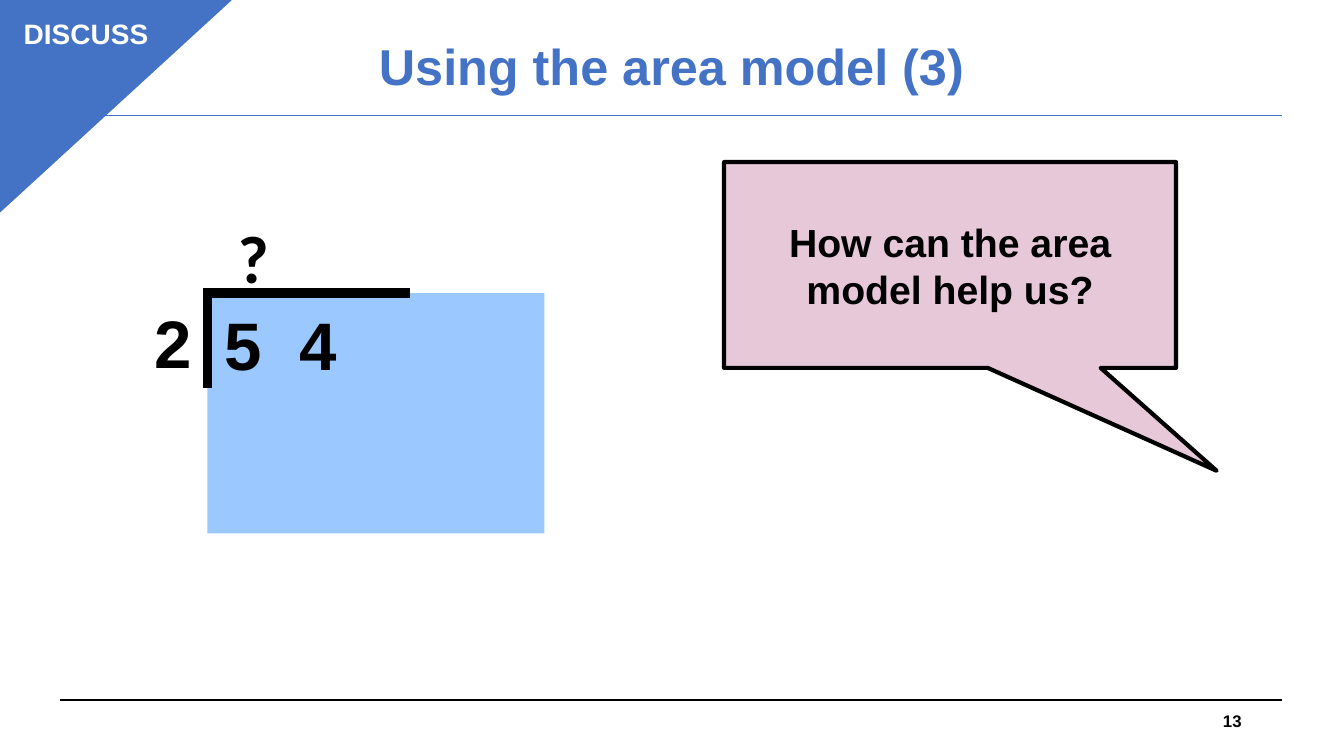
from pptx import Presentation
from pptx.dml.color import RGBColor
from pptx.enum.shapes import MSO_CONNECTOR, MSO_SHAPE
from pptx.enum.text import MSO_ANCHOR, PP_ALIGN
from pptx.oxml.xmlchemy import OxmlElement
from pptx.util import Inches, Pt

BLACK = RGBColor(0x00, 0x00, 0x00)
WHITE = RGBColor(0xFF, 0xFF, 0xFF)
BLUE = RGBColor(0x44, 0x72, 0xC4)
SKY = RGBColor(0x9B, 0xC8, 0xFF)
PINK = RGBColor(0xE6, 0xC8, 0xD9)

deck = Presentation()
deck.slide_width, deck.slide_height = Inches(13.33), Inches(7.5)
slide = deck.slides.add_slide(deck.slide_layouts[6])
shapes = slide.shapes

# Grid of 160 columns by 90 rows; a box is left, top, width, height
COL, ROW = deck.slide_width / 160, deck.slide_height / 90


def grid(box):
    return [int(n * unit) for n, unit in zip(box, (COL, ROW) * 2)]


def put(text, box, kind=None, fill=None, line=None, width=1, size=48,
        color=BLACK, font="Arial", align=PP_ALIGN.LEFT,
        anchor=MSO_ANCHOR.TOP, lead=None, track=0):
    if kind is None:
        item = shapes.add_textbox(*grid(box))
    else:
        item = shapes.add_shape(kind, *grid(box))
        item.shadow.inherit = False
    if fill is not None:
        item.fill.solid()
        item.fill.fore_color.rgb = fill
    else:
        item.fill.background()
    if line is not None:
        item.line.color.rgb = line
        item.line.width = Pt(width)
    else:
        item.line.fill.background()
    if text:
        frame = item.text_frame
        frame.word_wrap = True
        frame.vertical_anchor = anchor
        para = frame.paragraphs[0]
        para.alignment = align
        if lead:
            para.line_spacing = lead
        run = para.add_run()
        run.text = text
        run.font.name, run.font.size, run.font.bold = font, Pt(size), True
        run.font.color.rgb = color
        if track:
            run.font._element.set("spc", str(track))
    return item


# Division sum: answer, area, divisor, dividend
LEFT, TOP = 24.7, 34.9
DIGIT = (16.3, 10.9)
put("?", (27.1, 25.2, *DIGIT), MSO_SHAPE.RECTANGLE, line=WHITE, width=4.5,
    font="Calibri")
put("", (LEFT, TOP, 40.1, 28.6), MSO_SHAPE.RECTANGLE, fill=SKY)
put("2", (17.2, 35.3, *DIGIT))
put("5 4", (25.6, 35.5, *DIGIT), MSO_SHAPE.RECTANGLE, line=SKY, width=4.5,
    track=667)

# Header and footer rules, then the division bracket
START, END = 7.1, 152.6
for ends, color, width in (
        ((START, 83.3, END, 83.3), BLACK, 1.5),
        ((START, 13.7, END, 13.7), BLUE, 0.75),
        ((24.2, TOP, 48.8, TOP), BLACK, 6.75),
        ((LEFT, TOP, LEFT, 46.2), BLACK, 6.75)):
    rule = shapes.add_connector(MSO_CONNECTOR.STRAIGHT, *grid(ends))
    rule.line.color.rgb = color
    rule.line.width = Pt(width)
    rule._element.spPr.append(OxmlElement("a:effectLst"))

# Question callout
MID = {"align": PP_ALIGN.CENTER, "anchor": MSO_ANCHOR.MIDDLE}
ask = put("How can the area model help us?", (86.2, 19.3, 53.8, 24.5),
          MSO_SHAPE.RECTANGULAR_CALLOUT, fill=PINK, line=BLACK, width=3,
          size=28, **MID)
ask.adjustments[0], ask.adjustments[1] = 0.59, 1

# Title and slide number
put("Using the area model (3)", (28.3, 1.6, 103.3, 13.3), size=36,
    color=BLUE, lead=0.9, **MID)
put("13", (113, 83.4, 36, 4.8), size=12, align=PP_ALIGN.RIGHT,
    anchor=MSO_ANCHOR.MIDDLE)

# Corner flag
flag = put("", (0, 0, 27.5, 25.2), MSO_SHAPE.ISOSCELES_TRIANGLE,
           fill=BLUE, line=BLUE)
flag.adjustments[0] = 0
flag._element.spPr.xfrm.set("flipV", "1")
put("DISCUSS", (0, 1.4, 20.5, 5.3), size=20, color=WHITE,
    align=PP_ALIGN.CENTER)

deck.save("out.pptx")
